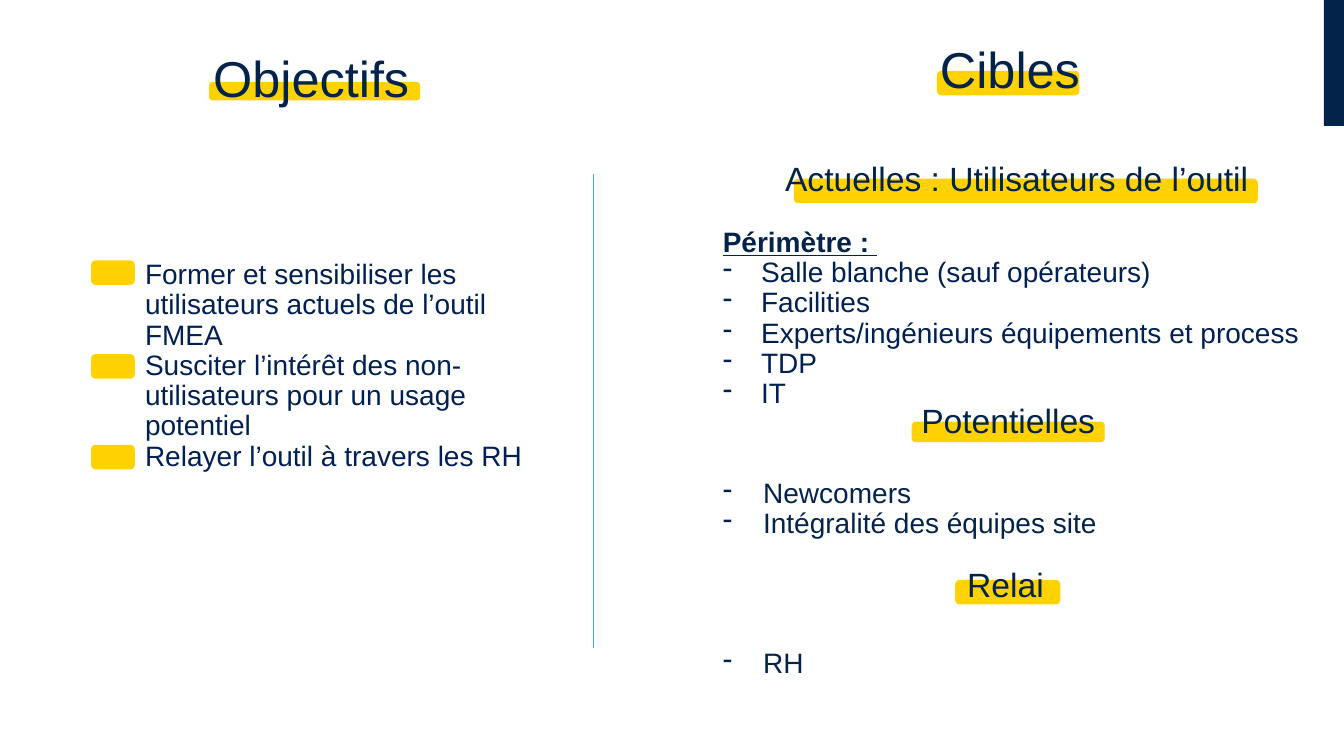
from pptx import Presentation
from pptx import util as u
from pptx.dml.color import RGBColor
from pptx.enum import shapes, text
from pptx.oxml.ns import qn
from lxml import etree

NAVY = RGBColor(0x03, 0x23, 0x4B)
DEEP_BLUE = RGBColor(0x00, 0x20, 0x52)
YELLOW = RGBColor(0xFF, 0xD2, 0x00)
SKY = RGBColor(0x3C, 0xB4, 0xE6)
FONT = "Arial"
LIST_LEFT = 7.07
LIST_WIDTH = 6.19
BOX_HEIGHT = 1.43


def place(shape, left, top, width, height):
    shape.left, shape.top = u.Inches(left), u.Inches(top)
    shape.width, shape.height = u.Inches(width), u.Inches(height)


def add_block(slide, kind, left, top, width, height, color):
    shape = slide.shapes.add_shape(
        kind, u.Inches(left), u.Inches(top), u.Inches(width), u.Inches(height))
    shape.shadow.inherit = False
    shape.fill.solid()
    shape.fill.fore_color.rgb = color
    shape.line.color.rgb = color
    shape.line.width = u.Pt(1)
    return shape


def add_highlight(slide, left, top, width, height=0.23):
    add_block(slide, shapes.MSO_SHAPE.ROUNDED_RECTANGLE,
              left, top, width, height, YELLOW)


def add_divider(slide, x, top, bottom):
    line = slide.shapes.add_connector(
        shapes.MSO_CONNECTOR.STRAIGHT,
        u.Inches(x), u.Inches(top), u.Inches(x), u.Inches(bottom))
    line.line.color.rgb = SKY
    line.line.width = u.Pt(0.5)
    etree.SubElement(line.element.spPr, qn("a:effectLst"))


def set_dash(paragraph, indent):
    properties = paragraph._p.get_or_add_pPr()
    properties.set("marL", str(u.Inches(indent)))
    properties.set("indent", str(-u.Inches(indent)))
    etree.SubElement(properties, qn("a:buFontTx"))
    etree.SubElement(properties, qn("a:buChar")).set("char", "-")


def write(paragraph, content, size=20, color=NAVY, bold=False,
          underline=False, align=text.PP_ALIGN.LEFT, dash_indent=None):
    paragraph.alignment = align
    paragraph.line_spacing = 0.9
    paragraph.space_before = u.Pt(0)
    if dash_indent:
        set_dash(paragraph, dash_indent)
    run = paragraph.add_run()
    run.text = content
    font = run.font
    font.name, font.size = FONT, u.Pt(size)
    font.bold, font.underline = bold, underline
    font.color.rgb = color


def prepare_frame(shape):
    frame = shape.text_frame
    frame.word_wrap = True
    frame.auto_size = text.MSO_AUTO_SIZE.NONE
    frame.vertical_anchor = text.MSO_ANCHOR.MIDDLE
    return frame


def add_text_frame(slide, left, top, width):
    box = slide.shapes.add_textbox(
        u.Inches(left), u.Inches(top), u.Inches(width), u.Inches(BOX_HEIGHT))
    return prepare_frame(box)


def add_heading(slide, content, left, top, width, size=24):
    frame = add_text_frame(slide, left, top, width)
    write(frame.paragraphs[0], content, size=size, align=text.PP_ALIGN.RIGHT)


def add_list(slide, items, left, top, width, color=NAVY, indent=0.4,
             heading=None):
    frame = add_text_frame(slide, left, top, width)
    paragraph = frame.paragraphs[0]
    if heading:
        write(paragraph, heading, bold=True, underline=True)
        paragraph = frame.add_paragraph()
    for index, item in enumerate(items):
        if index:
            paragraph = frame.add_paragraph()
        write(paragraph, item, color=color, dash_indent=indent)


def add_title(slide, content):
    title = slide.shapes.title
    place(title, 1.03, 0.09, 3.13, BOX_HEIGHT)
    frame = prepare_frame(title)
    write(frame.paragraphs[0], content, size=36, align=text.PP_ALIGN.RIGHT)
    title.element.getparent().append(title.element)


def add_objectives(slide):
    add_highlight(slide, 2.08, 0.82, 2.08, 0.17)
    add_title(slide, "Objectifs")
    add_list(slide, [
        "Former et sensibiliser les utilisateurs actuels de l’outil FMEA",
        "Susciter l’intérêt des non-utilisateurs pour un usage potentiel",
        "Relayer l’outil à travers les RH",
    ], 0.96, 2.92, 4.71, color=DEEP_BLUE, indent=0.38)
    for top in (2.59, 3.52, 4.42):
        add_highlight(slide, 0.91, top, 0.42)


def add_targets(slide):
    add_highlight(slide, 9.3, 0.71, 1.4)
    add_heading(slide, "Cibles", 8.27, 0, 2.54, size=36)

    add_highlight(slide, 7.88, 1.78, 4.59)
    add_heading(slide, "Actuelles : Utilisateurs de l’outil", 7.52, 1.08, 4.96)
    add_list(slide, [
        "Salle blanche (sauf opérateurs)",
        "Facilities",
        "Experts/ingénieurs équipements et process",
        "TDP",
        "IT",
    ], LIST_LEFT, 2.45, LIST_WIDTH, color=DEEP_BLUE, indent=0.38,
        heading="Périmètre : ")

    add_highlight(slide, 9.05, 4.19, 1.9, 0.19)
    add_heading(slide, "Potentielles", 6.26, 3.48, 4.7)
    add_list(slide, ["Newcomers", "Intégralité des équipes site"],
             LIST_LEFT, 4.34, LIST_WIDTH)

    add_highlight(slide, 9.48, 5.76, 1.03)
    add_heading(slide, "Relai", 7.73, 5.1, 2.72)
    add_list(slide, ["RH"], LIST_LEFT, 5.88, LIST_WIDTH)


def main():
    presentation = Presentation()
    presentation.slide_width = u.Inches(13.33)
    presentation.slide_height = u.Inches(7.5)
    slide = presentation.slides.add_slide(presentation.slide_layouts[5])
    corner = add_block(slide, shapes.MSO_SHAPE.RECTANGLE,
                       13.13, 0, 0.2, 1.25, NAVY)
    corner.line.fill.background()
    add_divider(slide, 5.89, 1.73, 6.43)
    add_objectives(slide)
    add_targets(slide)
    presentation.save("out.pptx")


if __name__ == "__main__":
    main()
